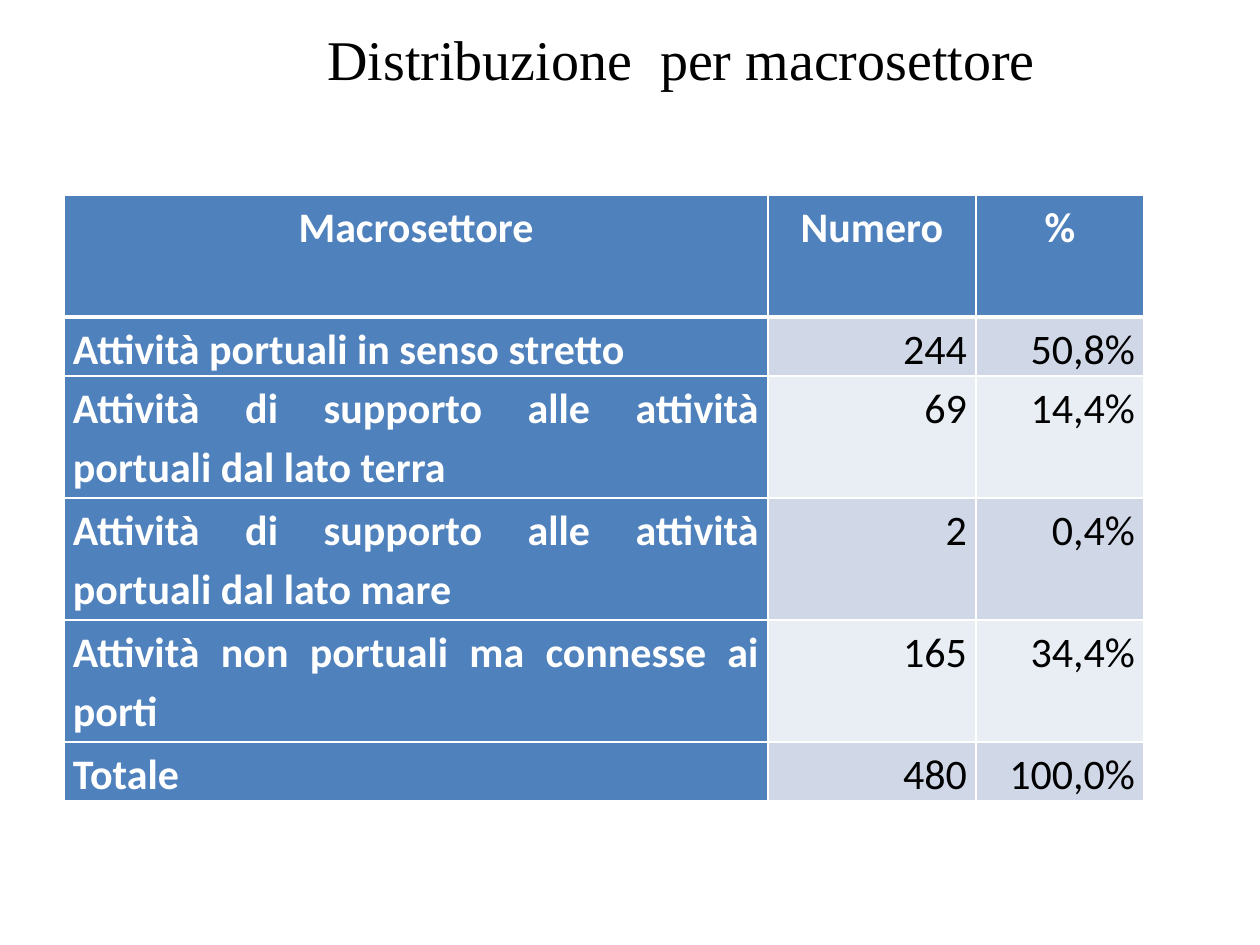
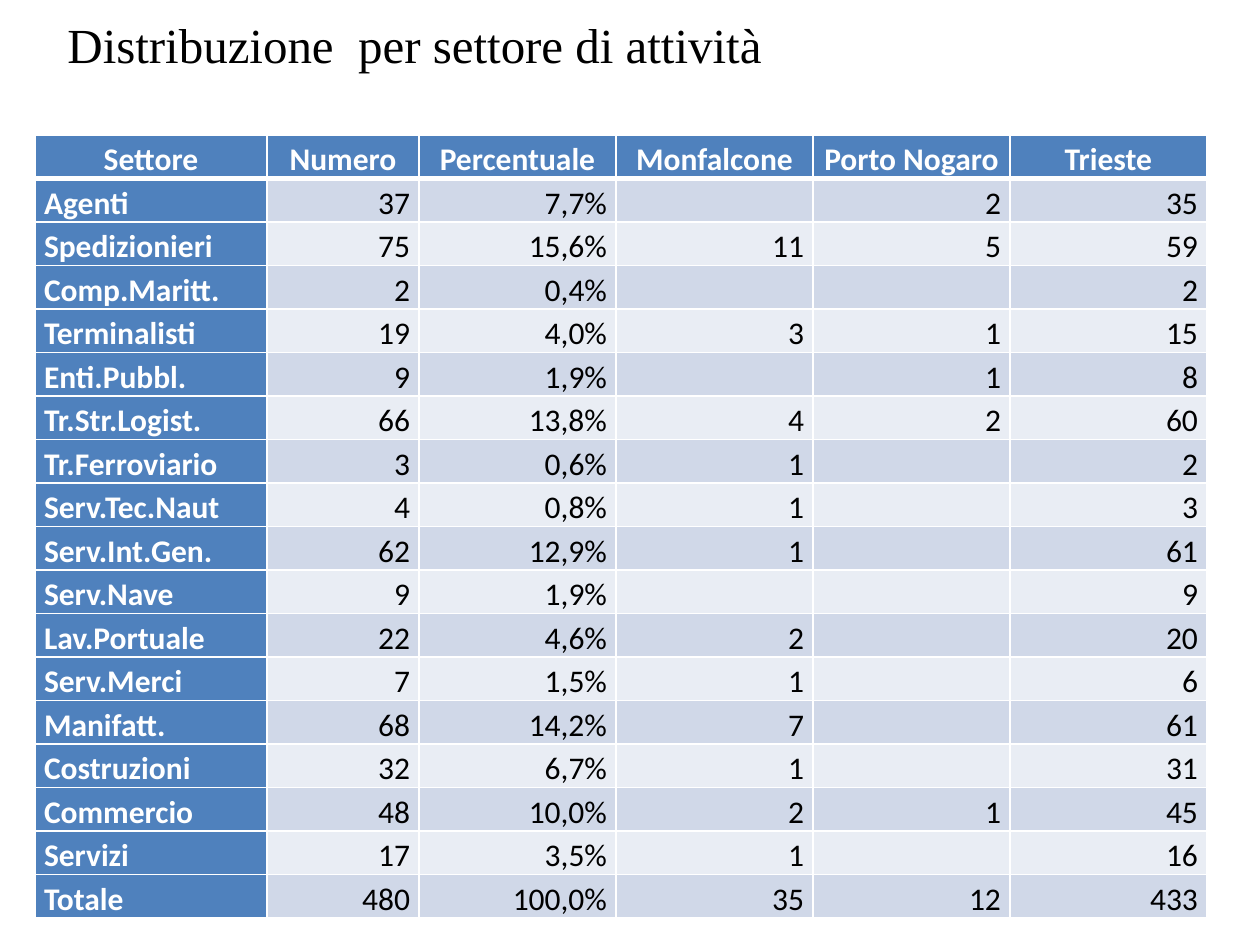
from lxml import etree
from pptx import Presentation
from pptx.dml.color import RGBColor
from pptx.enum.text import MSO_ANCHOR, MSO_AUTO_SIZE, PP_ALIGN
from pptx.oxml.ns import qn
from pptx.util import Emu, Pt

BLUE, WHITE, BLACK = "4F81BD", "FFFFFF", "000000"
BANDS = ["E9EDF4", "D0D8E8"]

SLIDES = [
    {
        "title": "Distribuzione  per macrosettore",
        "title_box": (315, 18, 740, 80),
        "title_size": 32,
        "title_align": PP_ALIGN.JUSTIFY,
        "table_box": (64, 195, 1080, 606),
        "columns": [704, 208, 168],
        "row_heights": [122, 59, 122, 122, 122, 59],
        "text_size": 24,
        "rows": [
            ["Macrosettore", "Numero", "%"],
            ["Attività portuali in senso stretto", "244", "50,8%"],
            ["Attività di supporto alle attività portuali dal lato terra", "69", "14,4%"],
            ["Attività di supporto alle attività portuali dal lato mare", "2", "0,4%"],
            ["Attività non portuali ma connesse ai porti", "165", "34,4%"],
            ["Totale", "480", "100,0%"],
        ],
    },
    {
        "title": "Distribuzione  per settore di attività",
        "title_box": (55, 8, 727, 72),
        "title_size": 28,
        "title_align": PP_ALIGN.LEFT,
        "table_box": (35, 135, 1172, 782),
        "columns": [232, 152] + [197] * 4,
        "row_heights": [],  # equal rows
        "text_size": 18,
        "rows": [
            ["Settore", "Numero", "Percentuale", "Monfalcone", "Porto Nogaro", "Trieste"],
            ["Agenti", "37", "7,7%", "", "2", "35"],
            ["Spedizionieri", "75", "15,6%", "11", "5", "59"],
            ["Comp.Maritt.", "2", "0,4%", "", "", "2"],
            ["Terminalisti", "19", "4,0%", "3", "1", "15"],
            ["Enti.Pubbl.", "9", "1,9%", "", "1", "8"],
            ["Tr.Str.Logist.", "66", "13,8%", "4", "2", "60"],
            ["Tr.Ferroviario", "3", "0,6%", "1", "", "2"],
            ["Serv.Tec.Naut", "4", "0,8%", "1", "", "3"],
            ["Serv.Int.Gen.", "62", "12,9%", "1", "", "61"],
            ["Serv.Nave", "9", "1,9%", "", "", "9"],
            ["Lav.Portuale", "22", "4,6%", "2", "", "20"],
            ["Serv.Merci", "7", "1,5%", "1", "", "6"],
            ["Manifatt.", "68", "14,2%", "7", "", "61"],
            ["Costruzioni", "32", "6,7%", "1", "", "31"],
            ["Commercio", "48", "10,0%", "2", "1", "45"],
            ["Servizi", "17", "3,5%", "1", "", "16"],
            ["Totale", "480", "100,0%", "35", "12", "433"],
        ],
    },
]


def px(length):
    """Turn pixels, 126 to the inch, into EMU."""
    return Emu(round(length * 914400 / 126))


def write(paragraph, text, font, size, color, bold=False):
    run = paragraph.add_run()
    run.text = text
    for attribute, value in {"name": font, "size": Pt(size), "bold": bold}.items():
        setattr(run.font, attribute, value)
    run.font.color.rgb = RGBColor.from_string(color)


prs = Presentation()
prs.slide_width, prs.slide_height = px(1260), px(945)

for content in SLIDES:
    slide = prs.slides.add_slide(prs.slide_layouts[6])

    title = slide.shapes.add_textbox(*map(px, content["title_box"])).text_frame
    title.word_wrap = False
    title.auto_size = MSO_AUTO_SIZE.SHAPE_TO_FIT_TEXT
    title.vertical_anchor = MSO_ANCHOR.MIDDLE
    title.paragraphs[0].alignment = content["title_align"]
    write(title.paragraphs[0], content["title"], "Times New Roman", content["title_size"], BLACK)

    rows, columns = content["rows"], content["columns"]
    distribution = slide.shapes.add_table(
        len(rows), len(columns), *map(px, content["table_box"])
    ).table
    distribution.first_col = True
    for column, width in zip(distribution.columns, columns):
        column.width = px(width)
    for row, height in zip(distribution.rows, content["row_heights"]):
        row.height = px(height)

    for r, values in enumerate(rows):
        for c, value in enumerate(values):
            heading = r == 0 or c == 0
            cell = distribution.cell(r, c)
            cell.margin_left = cell.margin_right = px(9)
            cell.margin_top = cell.margin_bottom = 0
            cell.fill.solid()
            cell.fill.fore_color.rgb = RGBColor.from_string(BLUE if heading else BANDS[r % 2])

            # Cell borders precede the fill; the rule under the header is thicker.
            weights = {"L": 1, "R": 1, "T": 3 if r == 1 else 1, "B": 3 if r == 0 else 1}
            for position, (side, weight) in enumerate(weights.items()):
                border = etree.Element(qn(f"a:ln{side}"), w=str(Pt(weight)))
                solid = etree.SubElement(border, qn("a:solidFill"))
                etree.SubElement(solid, qn("a:srgbClr"), val=WHITE)
                cell._tc.get_or_add_tcPr().insert(position, border)

            paragraph = cell.text_frame.paragraphs[0]
            paragraph.line_spacing = 1.15
            if r == 0:
                paragraph.alignment = PP_ALIGN.CENTER
            else:
                paragraph.alignment = PP_ALIGN.JUSTIFY if c == 0 else PP_ALIGN.RIGHT
            if value:
                write(paragraph, value, "Calibri", content["text_size"],
                      WHITE if heading else BLACK, heading)

prs.save("out.pptx")
